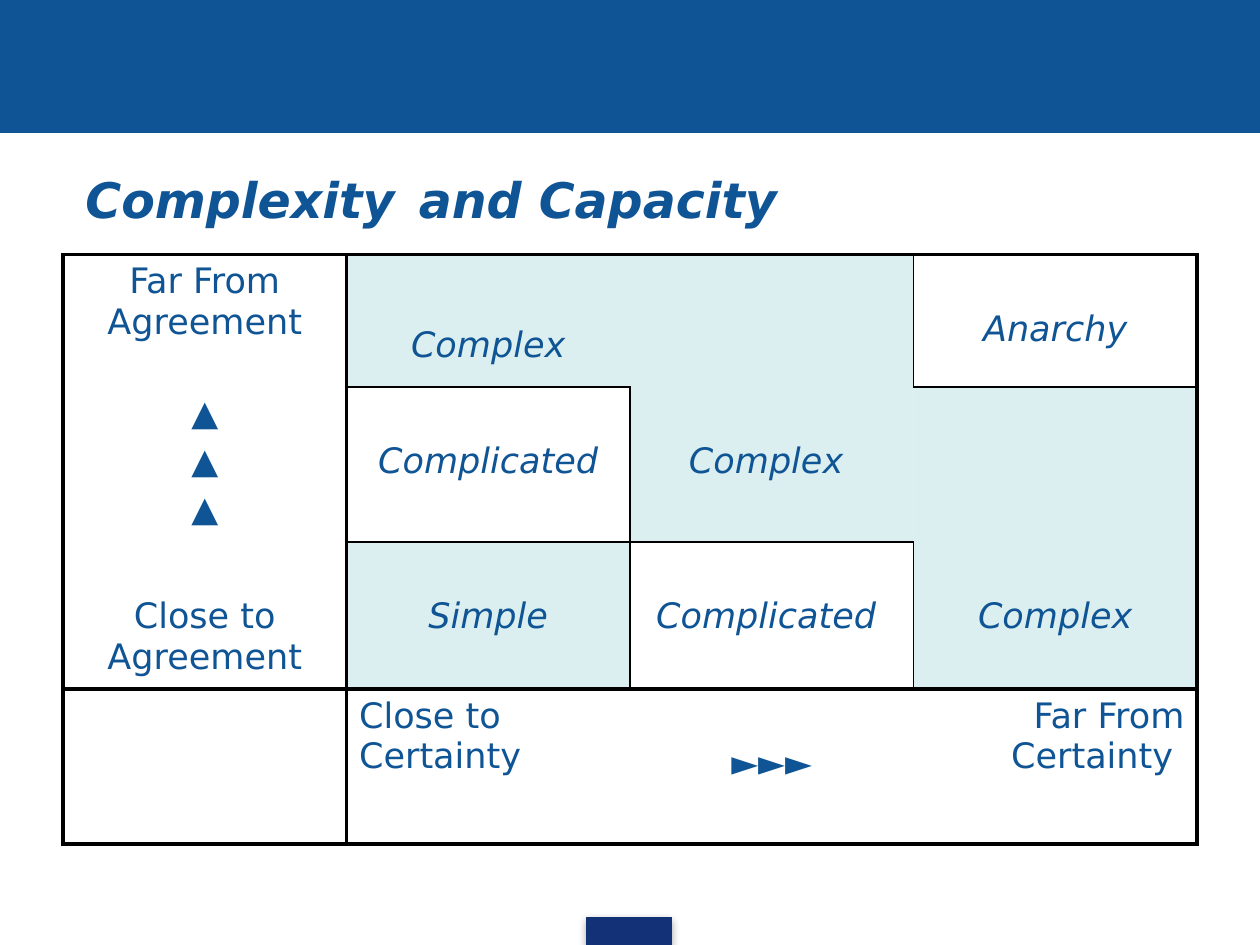
import pptx
import pptx.dml.color
import pptx.enum.shapes
import pptx.enum.text
import pptx.oxml
import pptx.oxml.ns
import pptx.util
from lxml import etree

Inches, Pt = pptx.util.Inches, pptx.util.Pt
ALIGN = pptx.enum.text.PP_ALIGN
COLORS = {"blue": "0F5494", "navy": "133176", "teal": "BBE0E3", "line": "000000"}
FONT = "DejaVu Sans"
WIDTH, HEIGHT = 10, 7.5


def rgb(name):
    return pptx.dml.color.RGBColor.from_string(COLORS[name])


def add_element(parent, tag, **attributes):
    return etree.SubElement(parent, pptx.oxml.ns.qn(tag), attributes)


deck = pptx.Presentation()
deck.slide_width, deck.slide_height = Inches(WIDTH), Inches(HEIGHT)
page = deck.slides.add_slide(deck.slide_layouts[6])

# Header band and footer tab
for color, left, top, width, height in (
    ("blue", 0, 0, WIDTH, 0.14 * HEIGHT),
    ("navy", 4.66, 7.28, 0.67, 0.22),
):
    bar = page.shapes.add_shape(
        pptx.enum.shapes.MSO_SHAPE.RECTANGLE,
        Inches(left), Inches(top), Inches(width), Inches(height))
    bar.shadow.inherit = False
    bar.fill.solid()
    bar.fill.fore_color.rgb = rgb(color)
    bar.line.color.rgb = rgb(color)
    bar.line.width = Pt(0.75)

# Soft shadow under the footer tab, the last bar drawn
effects = bar.element.spPr.find(pptx.oxml.ns.qn("a:effectLst"))
shadow = add_element(effects, "a:outerShdw", blurRad=str(Pt(5)), dist=str(Pt(1.8)),
                     dir="5400000", rotWithShape="0")
add_element(add_element(shadow, "a:srgbClr", val=COLORS["line"]), "a:alpha", val="35000")

# Title
title = page.shapes.add_textbox(Inches(0.58), Inches(1.17), Inches(9), Inches(0.69))
title.text_frame.word_wrap = True
title.text_frame.vertical_anchor = pptx.enum.text.MSO_ANCHOR.MIDDLE
para = title.text_frame.paragraphs[0]
for text, size in (("Complexity", 28), (" ", 40), ("and Capacity", 28)):
    span = para.add_run()
    span.text = text
    span.font.size = Pt(size)
para.font.name = FONT
para.font.bold = para.font.italic = True
para.font.color.rgb = rgb("blue")

# Matrix: agreement runs up the first column, certainty along the last row
ROW_HEIGHTS = (1.05, 1.23, 1.17, 1.23)
COLUMN_WIDTH = 0.225 * WIDTH
frame = page.shapes.add_table(4, 4, Inches(0.5), Inches(2.02),
                              Inches(4 * COLUMN_WIDTH), Inches(sum(ROW_HEIGHTS)))
matrix = frame.table
matrix.first_row = matrix.horz_banding = False
for column in matrix.columns:
    column.width = Inches(COLUMN_WIDTH)
for row, height in zip(matrix.rows, ROW_HEIGHTS):
    row.height = Inches(height)

TEXTS = (
    ("Far From Agreement", "Complex", "", "Anarchy"),
    ("▲\n▲\n▲", "Complicated", "Complex ", ""),
    ("Close to Agreement", "Simple", "Complicated ", "Complex"),
    ("", "Close to Certainty", "►►►", "Far From Certainty "),
)
TINTED = {(0, 1), (0, 2), (1, 2), (1, 3), (2, 1), (2, 3)}
TOP_MARGIN, LOWERED = 0.05, 0.43
TOP_MARGINS = {(0, 0): TOP_MARGIN, (0, 1): 0.56, (1, 0): TOP_MARGIN,
               (3, 1): TOP_MARGIN, (3, 3): TOP_MARGIN}
ALIGNMENTS = {(3, 1): ALIGN.LEFT, (3, 3): ALIGN.RIGHT}

# Rule widths in points, 0 for none: five upright edges per row, four level ones per edge
THICK, THIN = 2.25, 1
UPRIGHT = [(THICK, THICK, *inner, THICK)
           for inner in ((0, THIN), (THIN, 0), (THIN, THIN), (0, 0))]
FULL = (THICK,) * 4
LEVEL = (FULL, (0, THIN, 0, THIN), (0, THIN, THIN, 0), FULL, FULL)

for r, texts in enumerate(TEXTS):
    for c, text in enumerate(texts):
        cell = matrix.cell(r, c)
        properties = cell._tc.get_or_add_tcPr()
        for side, width in (("L", UPRIGHT[r][c]), ("R", UPRIGHT[r][c + 1]),
                            ("T", LEVEL[r][c]), ("B", LEVEL[r + 1][c])):
            edge = add_element(properties, "a:ln" + side, w=str(Pt(width)))
            if width:
                add_element(add_element(edge, "a:solidFill"), "a:srgbClr", val=COLORS["line"])
            else:
                add_element(edge, "a:noFill")

        if (r, c) in TINTED:
            cell.fill.solid()
            cell.fill.fore_color.rgb = rgb("teal")
            tint = properties.find(pptx.oxml.ns.qn("a:solidFill"))[0]
            add_element(tint, "a:alpha", val="50000")
        else:
            cell.fill.background()

        if not text:
            continue
        cell.margin_top = Inches(TOP_MARGINS.get((r, c), LOWERED))
        cell.text = text
        for index, para in enumerate(cell.text_frame.paragraphs):
            para.alignment = ALIGNMENTS.get((r, c), ALIGN.CENTER)
            if index:
                para.space_before = Pt(4)
            para.font.name = FONT
            para.font.size = Pt(20)
            para.font.italic = r < 3 and c > 0
            para.font.color.rgb = rgb("blue")

deck.save("out.pptx")
